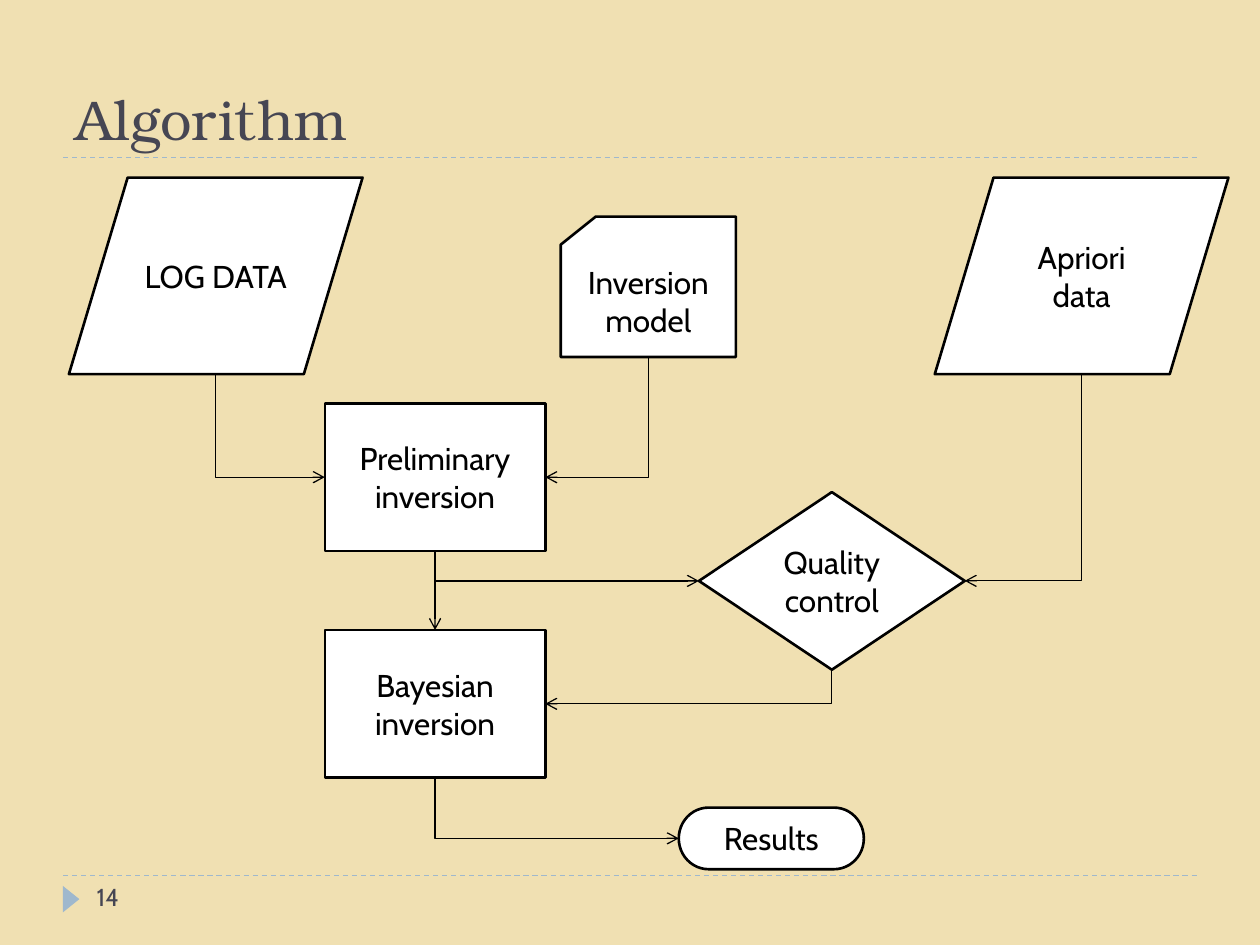
from lxml import etree
from pptx import Presentation
from pptx.dml.color import RGBColor
from pptx.enum.dml import MSO_LINE
from pptx.enum.shapes import MSO_CONNECTOR as CONN, MSO_SHAPE as SHAPE
from pptx.enum.text import MSO_ANCHOR as ANCHOR, PP_ALIGN as ALIGN
from pptx.oxml.ns import qn
from pptx.util import Pt

PAPER, INK, WHITE, SLATE, BLUE = "F0E0B2", "000000", "FFFFFF", "464653", "9FB8CD"
BODY_FONT, TITLE_FONT = "Cabin", "TeX Gyre Bonum"


def paint(color_format, hex_color):
    color_format.rgb = RGBColor.from_string(hex_color)


def fill(target, hex_color):
    target.fill.solid()
    paint(target.fill.fore_color, hex_color)


def write(s, text, size, font, color, align=ALIGN.LEFT, anchor=ANCHOR.TOP):
    tf = s.text_frame
    tf.word_wrap = True
    tf.vertical_anchor = anchor
    p = tf.paragraphs[0]
    p.alignment = align
    r = p.add_run()
    r.text = text
    r.font.size, r.font.name = Pt(size), font
    paint(r.font.color, color)


def add_text(sp, box, *args, **kwargs):
    write(sp.add_textbox(*map(Pt, box)), *args, **kwargs)


def add_line(sp, x1, y1, x2, y2, color, kind=CONN.STRAIGHT):
    line = sp.add_connector(kind, *map(Pt, (x1, y1, x2, y2)))
    line.line.width = Pt(0.75)
    paint(line.line.color, color)
    etree.SubElement(line._element.spPr, qn("a:effectLst"))
    return line


def add_arrowhead(line):
    ln = line.line._get_or_add_ln()
    etree.SubElement(ln, qn("a:tailEnd"), type="arrow")


def add_rule(sp, x, y, width):
    add_line(sp, x, y, x + width, y, BLUE).line.dash_style = MSO_LINE.DASH


def add_elbow(sp, x1, y1, x2, y2):
    """Arrow that runs down from the start, then sideways to the end."""
    across, down = abs(x2 - x1), y2 - y1
    # The preset runs sideways first, so its box is turned about its centre.
    left = (x1 + x2 - down) / 2
    top = (y1 + y2 - across) / 2
    line = add_line(sp, left, top, left + down, top + across, INK, CONN.ELBOW)
    sp_pr = line._element.spPr
    sp_pr.find(qn("a:prstGeom")).set("prst", "bentConnector2")
    xfrm = sp_pr.find(qn("a:xfrm"))
    if x2 > x1:
        xfrm.set("rot", str(270 * 60000))
        xfrm.set("flipH", "1")
    else:
        xfrm.set("rot", str(90 * 60000))
    add_arrowhead(line)


def add_header(sp, x, y, width, height):
    add_rule(sp, x, y + height, width)
    add_text(sp, (x, y, width, height), "Algorithm", 32, TITLE_FONT, SLATE,
             anchor=ANCHOR.BOTTOM)


def add_footer(sp, x, y, width):
    add_rule(sp, x, y, width)
    marker = sp.add_shape(SHAPE.ISOSCELES_TRIANGLE,
                          *map(Pt, (x - 2.9, y + 8.7, 15.1, 9.4)))
    marker.rotation = 90
    marker.shadow.inherit = False
    fill(marker, BLUE)
    marker.line.fill.background()
    add_text(sp, (x + 12.2, y, 156, 28.8), "14", 14, BODY_FONT, SLATE)


def add_flowchart(sp, x, y):
    data, process = (167.8, 112.3), (126, 84.4)
    nodes = {
        "LOG DATA": (SHAPE.FLOWCHART_DATA, 0, 0, *data),
        "Apriori data": (SHAPE.FLOWCHART_DATA, 494.8, 0, *data),
        "Preliminary inversion": (SHAPE.FLOWCHART_PROCESS, 146.2, 129, *process),
        "Quality control": (SHAPE.FLOWCHART_DECISION, 360, 179.7, 151.9, 101.5),
        "Inversion model": (SHAPE.FLOWCHART_CARD, 281, 22.3, 100.1, 80.2),
        "Bayesian inversion": (SHAPE.FLOWCHART_PROCESS, 146.2, 258.5, *process),
        "Results": (SHAPE.FLOWCHART_TERMINATOR, 348.5, 360, 105.8, 35.2),
    }
    links = [
        ("LOG DATA", "Preliminary inversion"),
        ("Inversion model", "Preliminary inversion"),
        ("Apriori data", "Quality control"),
        ("Preliminary inversion", "Bayesian inversion"),
        ("Preliminary inversion", "Quality control"),
        ("Quality control", "Bayesian inversion"),
        ("Bayesian inversion", "Results"),
    ]
    boxes = {}
    for text, (kind, dx, dy, width, height) in nodes.items():
        boxes[text] = box = (x + dx, y + dy, width, height)
        s = sp.add_shape(kind, *map(Pt, box))
        s.shadow.inherit = False
        fill(s, WHITE)
        paint(s.line.color, INK)
        s.line.width = Pt(1.5)
        write(s, text, 18, BODY_FONT, INK, ALIGN.CENTER, ANCHOR.MIDDLE)

    for source, target in links:
        left, top, width, height = boxes[source]
        x1, y1 = left + width / 2, top + height
        left, top, width, height = boxes[target]
        if x1 == left + width / 2:
            add_arrowhead(add_line(sp, x1, y1, x1, top, INK))
        else:
            x2 = left if x1 < left else left + width
            add_elbow(sp, x1, y1, x2, top + height / 2)


def main():
    prs = Presentation()
    prs.slide_width, prs.slide_height = Pt(720), Pt(540)
    slide = prs.slides.add_slide(prs.slide_layouts[6])
    fill(slide.background, PAPER)
    sp = slide.shapes
    add_header(sp, 36, 12.2, 648, 77.8)
    add_footer(sp, 36, 500.4, 648)
    add_flowchart(sp, 39.4, 101.5)
    prs.save("out.pptx")


if __name__ == "__main__":
    main()
